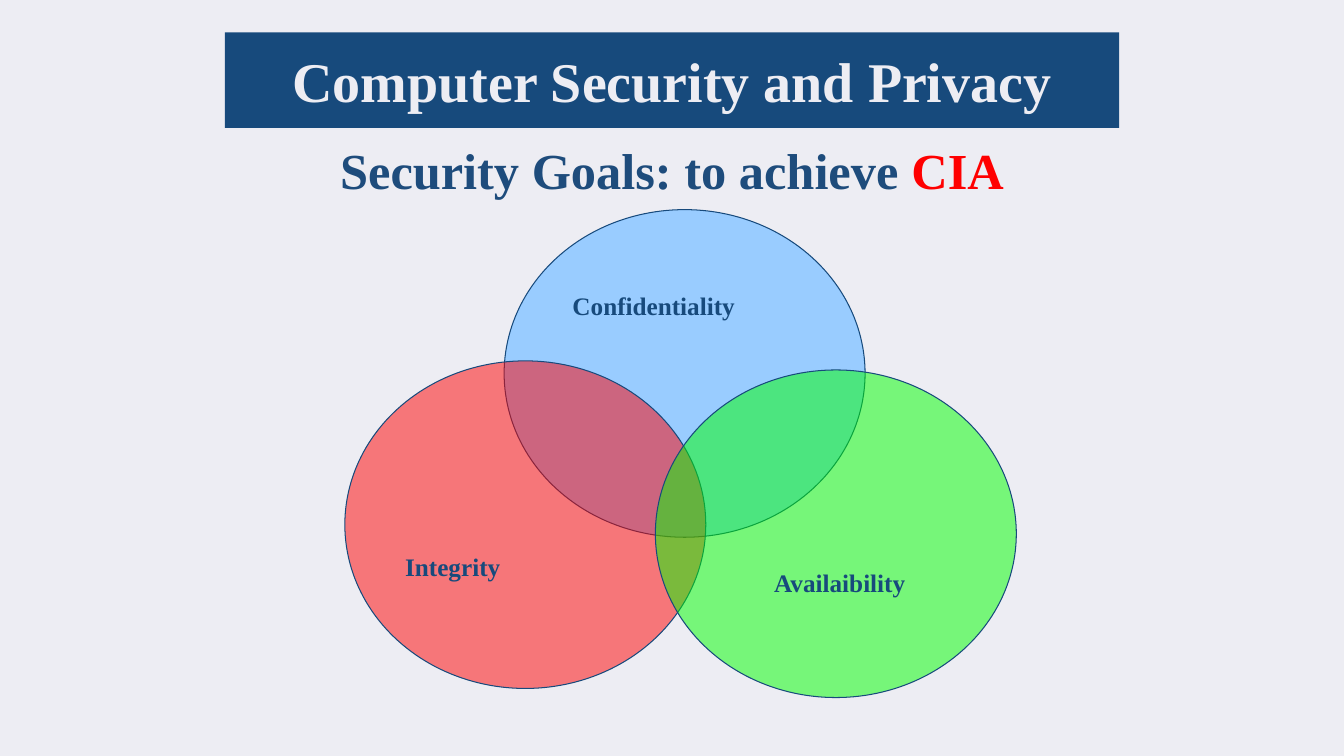
from lxml.etree import SubElement
from pptx import Presentation
from pptx.dml.color import RGBColor
from pptx.enum.shapes import MSO_SHAPE
from pptx.enum.text import MSO_ANCHOR, MSO_AUTO_SIZE, PP_ALIGN
from pptx.oxml.ns import qn
from pptx.util import Inches, Pt

PALE = RGBColor(0xED, 0xED, 0xF3)
NAVY = RGBColor(0x17, 0x4A, 0x7C)
STEEL = RGBColor(0x1E, 0x4C, 0x7C)
SKY = RGBColor(0x99, 0xCC, 0xFF)
RED = RGBColor(0xFF, 0x00, 0x00)
GREEN = RGBColor(0x00, 0xFF, 0x00)
FACE = "Times New Roman"


def place(shape, box):
    """Move a shape to a box given in inches."""
    shape.left, shape.top, shape.width, shape.height = map(Inches, box)


def add_run(para, text, size, color):
    """Add one bold run to a paragraph."""
    run = para.add_run()
    run.text = text
    font = run.font
    font.name, font.size, font.bold = FACE, Pt(size), True
    font.color.rgb = color


def add_title(slide, box):
    """Fill the title banner."""
    title = slide.shapes.title
    place(title, box)
    title.fill.solid()
    title.fill.fore_color.rgb = NAVY
    frame = title.text_frame
    frame.auto_size = MSO_AUTO_SIZE.NONE
    frame.vertical_anchor = MSO_ANCHOR.MIDDLE
    frame.margin_left = frame.margin_right = Inches(0.2)
    frame.margin_top = frame.margin_bottom = 0
    para = frame.paragraphs[0]
    para.alignment = PP_ALIGN.CENTER
    add_run(para, "Computer Security and Privacy", 40, PALE)


def add_goal(slide, box):
    """Write the centred goal line in the body."""
    body = slide.placeholders[1]
    place(body, box)
    frame = body.text_frame
    frame.auto_size = MSO_AUTO_SIZE.NONE
    frame.vertical_anchor = MSO_ANCHOR.TOP
    para = frame.paragraphs[0]
    props = para._p.get_or_add_pPr()
    props.set("marL", "0")
    props.set("indent", "0")
    SubElement(props, qn("a:buNone"))
    para.alignment = PP_ALIGN.CENTER
    para.space_before = Pt(0)
    add_run(para, "Security Goals: to achieve ", 36, STEEL)
    add_run(para, "CIA", 36, RED)


def add_disc(slide, box, color, alpha):
    """Draw one circle of the diagram with its opacity in percent."""
    disc = slide.shapes.add_shape(MSO_SHAPE.OVAL, *map(Inches, box))
    disc.shadow.inherit = False
    disc.fill.solid()
    disc.fill.fore_color.rgb = color
    if alpha < 100:
        tint = disc.fill._xPr.find(qn("a:solidFill"))[0]
        SubElement(tint, qn("a:alpha"), val=str(alpha * 1000))
    disc.line.color.rgb = NAVY
    disc.line.width = Pt(0.75)


def add_label(slide, box, text):
    """Write the name of one goal."""
    frame = slide.shapes.add_textbox(*map(Inches, box)).text_frame
    frame.word_wrap = True
    add_run(frame.paragraphs[0], text, 18, NAVY)


def add_venn(slide, box):
    """Draw three overlapping circles and their labels in a box."""
    left, top, wide, high = box
    disc_w, disc_h = 3.58, 3.25
    goals = [
        ("Confidentiality", 1.58, 0, SKY, 100, 0.58, 0.75, 2.67),
        ("Integrity", 0, 1.5, RED, 50, 0.5, 1.84, 2.17),
        ("Availaibility", wide - disc_w, high - disc_h, GREEN, 50,
         1.08, 1.91, 2.25),
    ]
    for _, x, y, color, alpha, *_ in goals:
        add_disc(slide, (left + x, top + y, disc_w, disc_h), color, alpha)
    for text, x, y, _, _, dx, dy, width in goals:
        add_label(slide, (left + x + dx, top + y + dy, width, 0.4), text)


def main():
    """Build and save the slide."""
    deck = Presentation()
    deck.slide_width, deck.slide_height = Inches(13.33), Inches(7.5)
    slide = deck.slides.add_slide(deck.slide_layouts[1])
    slide.background.fill.solid()
    slide.background.fill.fore_color.rgb = PALE
    add_title(slide, (2.23, 0.32, 8.87, 0.95))
    add_goal(slide, (2.02, 1.33, 9.29, 5.7))
    add_venn(slide, (3.42, 2.08, 6.66, 4.84))
    deck.save("out.pptx")


if __name__ == "__main__":
    main()
